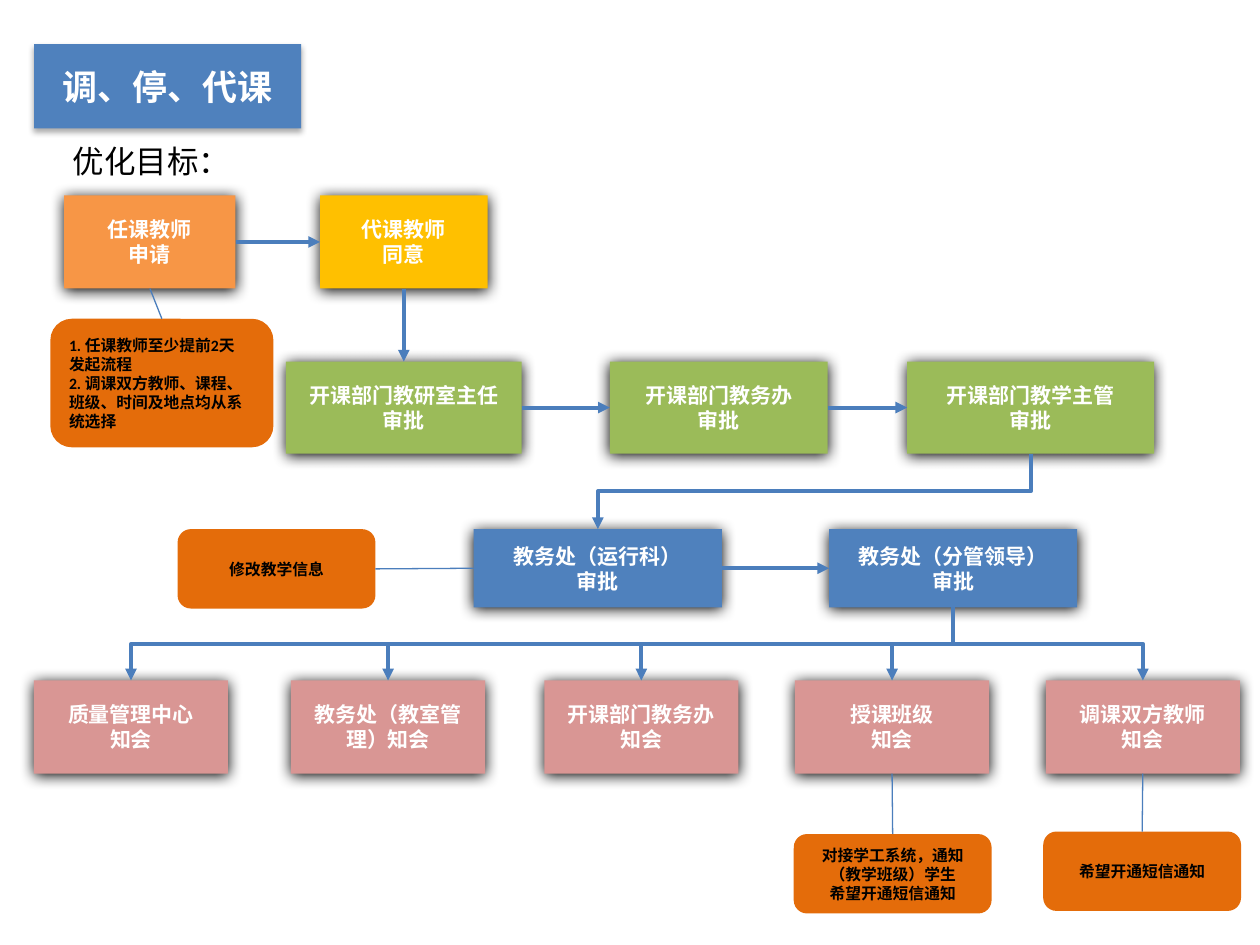
"""Build the approval flow slide for moved, cancelled and substituted classes."""
from lxml import etree
from pptx import Presentation, util as u
from pptx.dml import color
from pptx.enum import shapes, text
from pptx.oxml import ns

BLUE, GREEN, PINK, RUST = "4F81BD", "9BBB59", "D99694", "E46C0A"
ROWS = [
    (1.55, 0.74, [
        ("apply", 0.51, 1.36, "F79646", "任课教师\n申请"),
        ("agree", 2.54, 1.33, "FFC000", "代课教师\n同意"),
    ]),
    (2.87, 0.73, [
        ("group", 2.27, 1.87, GREEN, "开课部门教研室主任\n审批"),
        ("office", 4.84, 1.73, GREEN, "开课部门教务办\n审批"),
        ("chief", 7.2, 1.96, GREEN, "开课部门教学主管\n审批"),
    ]),
    (4.2, 0.62, [
        ("run", 3.76, 1.97, BLUE, "教务处（运行科）\n审批"),
        ("lead", 6.58, 1.97, BLUE, "教务处（分管领导）\n审批"),
    ]),
    (5.4, 0.74, [
        ("centre", 0.27, 1.54, PINK, "质量管理中心\n知会"),
        ("rooms", 2.31, 1.54, PINK, "教务处（教室管理）知会"),
        ("staff", 4.32, 1.54, PINK, "开课部门教务办\n知会"),
        ("class", 6.31, 1.54, PINK, "授课班级\n知会"),
        ("pair", 8.3, 1.54, PINK, "调课双方教师\n知会"),
    ]),
]
NOTES = [
    ("rules", (0.4, 2.53, 1.77, 1.02), "LEFT",
     "1. 任课教师至少提前2天\n发起流程\n2. 调课双方教师、课程、班级、时间及地点均从系统选择"),
    ("edit", (1.41, 4.2, 1.57, 0.63), "CENTER", "修改教学信息"),
    ("pupils", (6.3, 6.62, 1.57, 0.63), "CENTER",
     "对接学工系统，通知（教学班级）学生\n希望开通短信通知"),
    ("phone", (8.28, 6.6, 1.57, 0.63), "CENTER", "希望开通短信通知"),
]
TOP, LEFT, BOTTOM, RIGHT = range(4)
ACROSS = [("apply", "agree"), ("group", "office"), ("office", "chief"), ("run", "lead")]
BENDS = [("chief", "run")] + [("lead", box[0]) for box in ROWS[3][2]]
LINKS = [
    ("apply", BOTTOM, "rules", TOP),
    ("class", BOTTOM, "pupils", TOP),
    ("pair", BOTTOM, "phone", TOP),
    ("run", LEFT, "edit", RIGHT),
]
DEEP, SOFT = (100, 8.5, 1), (32, 3.5, 2.2)


def paint(part, code):
    """Give a fill or font one hex colour."""
    if hasattr(part, "solid"):
        part.solid()
        part = part.fore_color
    part.rgb = color.RGBColor.from_string(code)


def write(shape, words, size, code="FFFFFF", bold=True, side="CENTER", wrap=True):
    """Fill a shape with text in one format."""
    frame = shape.text_frame
    frame.text = words
    look = {"word_wrap": wrap, "auto_size": text.MSO_AUTO_SIZE.NONE,
            "vertical_anchor": text.MSO_ANCHOR.MIDDLE}
    for key, value in look.items():
        setattr(frame, key, value)
    for para in frame.paragraphs:
        para.alignment = getattr(text.PP_ALIGN, side)
        for key, value in {"name": "Calibri", "size": u.Pt(size), "bold": bold}.items():
            setattr(para.font, key, value)
        paint(para.font.color, code)


def place(shape, spot):
    """Move and size a shape in inches."""
    for key, value in zip(("left", "top", "width", "height"), spot):
        setattr(shape, key, u.Inches(value))


def finish(shape, code, shade=None):
    """Set a plain fill and an optional downward shadow."""
    paint(shape.fill, code)
    shape.line.fill.background()
    shape.shadow.inherit = False
    if shade:
        alpha, blur, dist = shade
        effects = shape.element.spPr.find(ns.qn("a:effectLst"))
        outer = etree.SubElement(effects, ns.qn("a:outerShdw"), blurRad=str(u.Pt(blur)),
                                 dist=str(u.Pt(dist)), dir="5400000", rotWithShape="0")
        tone = etree.SubElement(outer, ns.qn("a:srgbClr"), val="000000")
        etree.SubElement(tone, ns.qn("a:alpha"), val=str(alpha * 1000))


def add_box(slide, kind, spot, code, shade=None):
    """Add one filled shape."""
    shape = slide.shapes.add_shape(kind, *map(u.Inches, spot))
    finish(shape, code, shade)
    return shape


def join(slide, start, out, end, into, kind="STRAIGHT", width=2.25, arrow=True):
    """Connect the sides of two shapes."""
    wire = slide.shapes.add_connector(getattr(shapes.MSO_CONNECTOR, kind), 0, 0, 0, 0)
    wire.begin_connect(start, out)
    wire.end_connect(end, into)
    paint(wire.line.fill, "4B7EBC")
    wire.line.width = u.Pt(width)
    if arrow:
        etree.SubElement(wire.get_or_add_ln(), ns.qn("a:tailEnd"), type="triangle")
    etree.SubElement(wire.element.spPr, ns.qn("a:effectLst"))
    return wire


def turn(wire):
    """Rotate an elbow so that it leaves and arrives vertically."""
    right = wire.end_x > wire.begin_x
    wide, high = wire.width, wire.height
    spot = {"left": wire.left + (wide - high) // 2, "top": wire.top + (high - wide) // 2,
            "width": high, "height": wide}
    for key, value in spot.items():
        setattr(wire, key, value)
    frame = wire.element.spPr.find(ns.qn("a:xfrm"))
    for key in ("flipH", "flipV"):
        frame.attrib.pop(key, None)
    frame.set("rot", "16200000" if right else "5400000")
    if right:
        frame.set("flipH", "1")


def main():
    """Lay out the slide and save it."""
    deck = Presentation()
    deck.slide_width, deck.slide_height = u.Inches(10), u.Inches(7.5)
    slide = deck.slides.add_slide(deck.slide_layouts[5])
    title = slide.shapes.title
    place(title, (0.27, 0.35, 2.12, 0.67))
    finish(title, BLUE, SOFT)
    write(title, "调、停、代课", 20)

    nodes = {}
    for top, high, boxes in ROWS:
        for name, left, wide, code, words in boxes:
            nodes[name] = add_box(slide, shapes.MSO_SHAPE.RECTANGLE,
                                  (left, top, wide, high), code, DEEP)
            write(nodes[name], words, 12)
    for name, spot, side, words in NOTES:
        nodes[name] = add_box(slide, shapes.MSO_SHAPE.ROUNDED_RECTANGLE, spot, RUST)
        write(nodes[name], words, 9, "000000", side=side)
    label = slide.shapes.add_textbox(*map(u.Inches, (0.48, 1.08, 1.46, 0.4)))
    write(label, "优化目标：", 18, "000000", bold=False, side="LEFT", wrap=False)

    for start, end in ACROSS:
        join(slide, nodes[start], RIGHT, nodes[end], LEFT)
    join(slide, nodes["agree"], BOTTOM, nodes["group"], TOP)
    for start, end in BENDS:
        turn(join(slide, nodes[start], BOTTOM, nodes[end], TOP, "ELBOW"))
    for start, out, end, into in LINKS:
        join(slide, nodes[start], out, nodes[end], into, width=0.75, arrow=False)
    deck.save("out.pptx")


if __name__ == "__main__":
    main()
